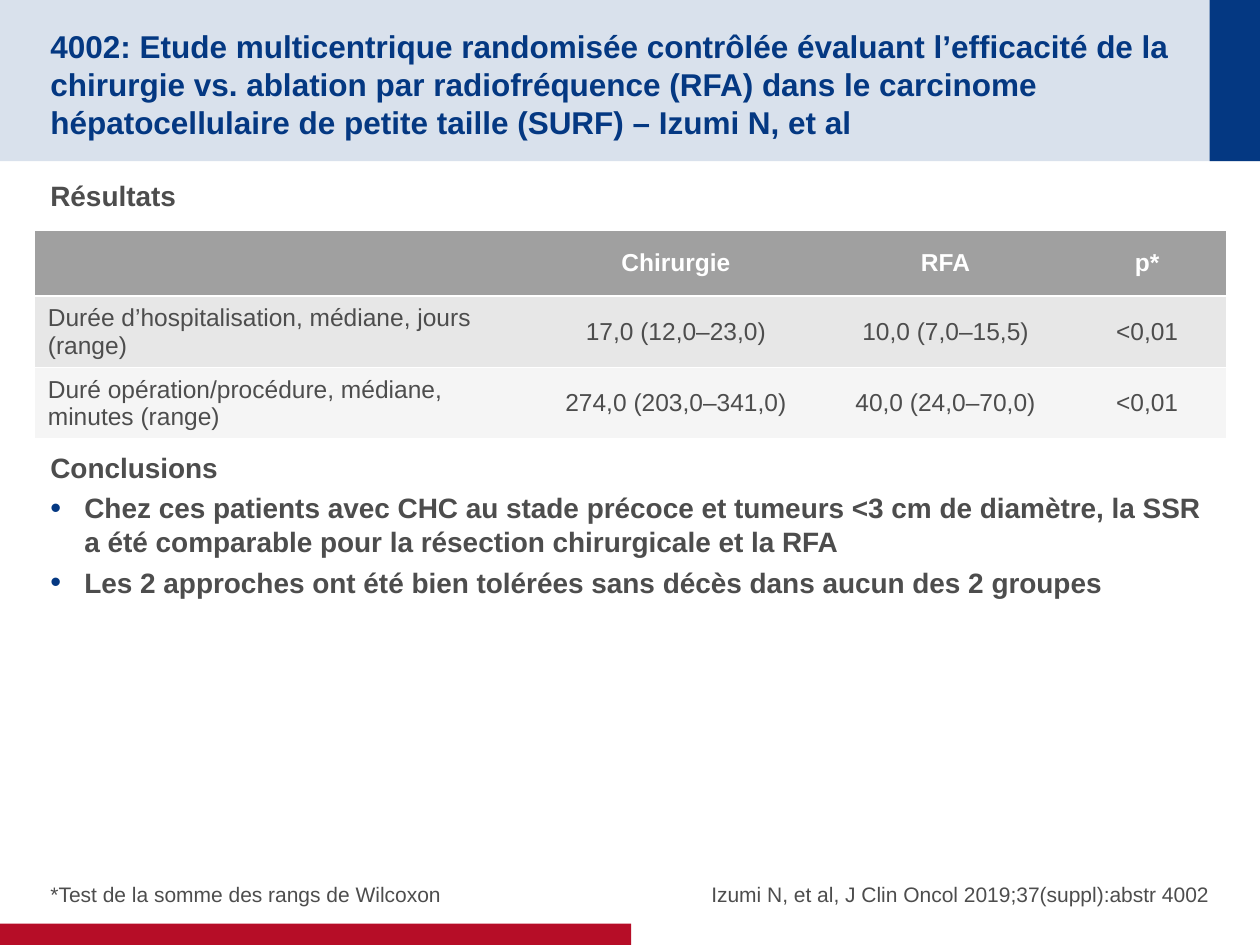
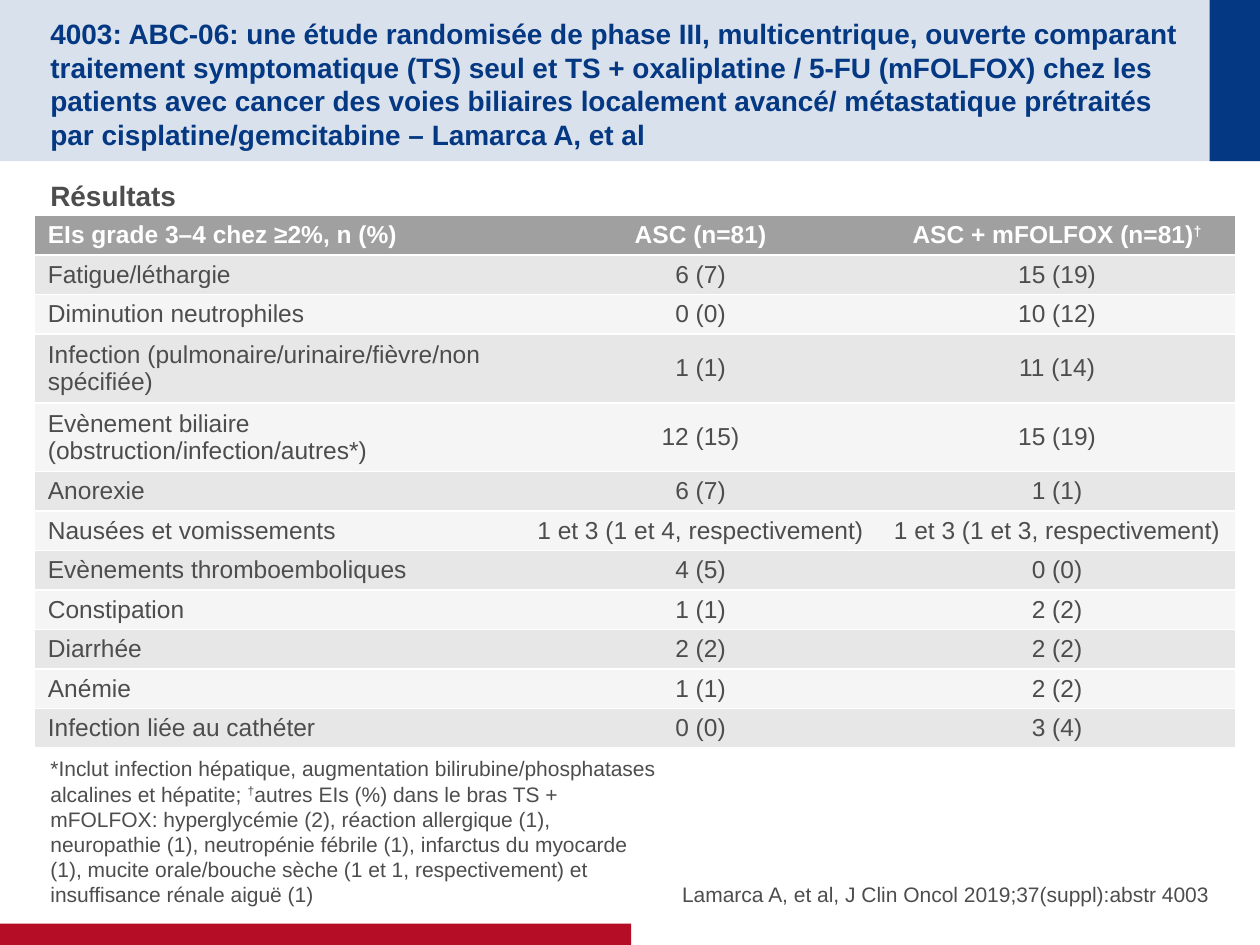
from dataclasses import dataclass

from lxml.etree import SubElement
from pptx import Presentation
from pptx.dml.color import RGBColor
from pptx.enum.shapes import MSO_SHAPE as Shape
from pptx.enum.text import MSO_ANCHOR as Anchor, PP_ALIGN as Align
from pptx.oxml import parse_xml
from pptx.oxml.ns import nsdecls, qn
from pptx.util import Inches, Pt

FONT = "Arial"
NAVY, PALE_NAVY, RED = "043882", "D9E1EC", "B60D27"
INK, WHITE = "4D4D4D", "FFFFFF"
HEADER_GREY, ROW_GREYS = "A0A0A0", ("E7E7E7", "F5F5F5")
DAGGER = "†"


@dataclass(frozen=True)
class Band:
    """A coloured rectangle found on every slide."""
    left: float
    top: float
    width: float
    height: float
    color: str


@dataclass(frozen=True)
class Item:
    """One paragraph of the body text."""
    text: str
    before: float = 0
    bullet: bool = False


@dataclass(frozen=True)
class Grid:
    """A data table with its header row first."""
    top: float
    columns: tuple[float, ...]
    heights: tuple[float, ...]
    margin: float
    rows: tuple[tuple[str, ...], ...]


@dataclass(frozen=True)
class Study:
    """Everything that differs from one slide to the next."""
    title: str
    title_size: float
    body: tuple[Item, ...]
    grid: Grid
    footnote: str
    footnote_width: float
    source: str


BANDS = (
    Band(0, 0, 10, 1.28, PALE_NAVY),
    Band(9.6, 0, 0.4, 1.28, NAVY),
    Band(0, 7.33, 5.01, 0.17, RED),
)

SINGLE, DOUBLE = 0.31, 0.52

SURF = Study(
    title="4002: Etude multicentrique randomisée contrôlée évaluant l’efficacité de la "
          "chirurgie vs. ablation par radiofréquence (RFA) dans le carcinome "
          "hépatocellulaire de petite taille (SURF) – Izumi N, et al",
    title_size=18,
    body=(
        Item("Résultats"),
        Item("Conclusions", before=132),
        Item("Chez ces patients avec CHC au stade précoce et tumeurs <3 cm de diamètre, "
             "la SSR a été comparable pour la résection chirurgicale et la RFA", bullet=True),
        Item("Les 2 approches ont été bien tolérées sans décès dans aucun des 2 groupes",
             bullet=True),
    ),
    grid=Grid(1.83, (3.92, 2.33, 1.95, 1.25), (0.52, 0.54, 0.54), 0.05, (
        ("", "Chirurgie", "RFA", "p*"),
        ("Durée d’hospitalisation, médiane, jours (range)",
         "17,0 (12,0–23,0)", "10,0 (7,0–15,5)", "<0,01"),
        ("Duré opération/procédure, médiane, minutes (range)",
         "274,0 (203,0–341,0)", "40,0 (24,0–70,0)", "<0,01"),
    )),
    footnote="*Test de la somme des rangs de Wilcoxon",
    footnote_width=4.52,
    source="Izumi N, et al, J Clin Oncol 2019;37(suppl):abstr 4002",
)

ABC_06 = Study(
    title="4003: ABC-06: une étude randomisée de phase III, multicentrique, ouverte comparant "
          "traitement symptomatique (TS) seul et TS + oxaliplatine / 5-FU (mFOLFOX) chez les "
          "patients avec cancer des voies biliaires localement avancé/ métastatique prétraités "
          "par cisplatine/gemcitabine – Lamarca A, et al",
    title_size=16,
    body=(Item("Résultats"),),
    grid=Grid(1.71, (3.86, 2.84, 2.82),
              (SINGLE,) * 3 + (DOUBLE,) * 2 + (SINGLE,) * 7, 0.04, (
        ("EIs grade 3–4 chez ≥2%, n (%)", "ASC (n=81)", "ASC + mFOLFOX (n=81)†"),
        ("Fatigue/léthargie", "6 (7)", "15 (19)"),
        ("Diminution neutrophiles", "0 (0)", "10 (12)"),
        ("Infection (pulmonaire/urinaire/fièvre/non spécifiée)", "1 (1)", "11 (14)"),
        ("Evènement biliaire (obstruction/infection/autres*)", "12 (15)", "15 (19)"),
        ("Anorexie", "6 (7)", "1 (1)"),
        ("Nausées et vomissements",
         "1 et 3 (1 et 4, respectivement)", "1 et 3 (1 et 3, respectivement)"),
        ("Evènements thromboemboliques", "4 (5)", "0 (0)"),
        ("Constipation", "1 (1)", "2 (2)"),
        ("Diarrhée", "2 (2)", "2 (2)"),
        ("Anémie", "1 (1)", "2 (2)"),
        ("Infection liée au cathéter", "0 (0)", "3 (4)"),
    )),
    footnote="*Inclut infection hépatique, augmentation bilirubine/phosphatases alcalines et "
             "hépatite; †autres EIs (%) dans le bras TS + mFOLFOX: hyperglycémie (2), réaction "
             "allergique (1), neuropathie (1), neutropénie fébrile (1), infarctus du myocarde "
             "(1), mucite orale/bouche sèche (1 et 1, respectivement) et insuffisance rénale "
             "aiguë (1)",
    footnote_width=4.88,
    source="Lamarca A, et al, J Clin Oncol 2019;37(suppl):abstr 4003",
)


def rgb(color: str) -> RGBColor:
    """Turn a hex string into a colour."""
    return RGBColor.from_string(color)


def write(para, text: str, *, size: float, color: str = INK, bold: bool = False,
          align=Align.LEFT, before: float = 0, after: float = 0, bullet: bool = False) -> None:
    """Fill a paragraph with formatted text, raising any dagger."""
    para.alignment = align
    para.space_before, para.space_after = Pt(before), Pt(after)
    for part in text.partition(DAGGER):
        if not part:
            continue
        span = para.add_run()
        span.text = part
        span.font.name, span.font.size, span.font.bold = FONT, Pt(size), bold
        span.font.color.rgb = rgb(color)
        if part == DAGGER:
            span.font._element.set("baseline", "30000")
    if bullet:
        add_bullet(para)


def add_bullet(para) -> None:
    """Give a paragraph a navy bullet and a hanging indent."""
    properties = para._p.get_or_add_pPr()
    indent = Inches(0.27)
    properties.set("marL", str(indent))
    properties.set("indent", str(-indent))
    bullet_color = SubElement(properties, qn("a:buClr"))
    SubElement(bullet_color, qn("a:srgbClr"), val=NAVY)
    SubElement(properties, qn("a:buSzPct"), val="110000")
    SubElement(properties, qn("a:buFont"), typeface=FONT)
    SubElement(properties, qn("a:buChar"), char="•")


def add_box(page, left: float, top: float, width: float, height: float, *,
            anchor=Anchor.TOP, inset_top: float = 0, inset_bottom: float = 0):
    """Add a wrapping text box and return its text frame."""
    box = page.shapes.add_textbox(Inches(left), Inches(top), Inches(width), Inches(height))
    frame = box.text_frame
    frame.word_wrap = True
    frame.vertical_anchor = anchor
    frame.margin_left = frame.margin_right = 0
    frame.margin_top, frame.margin_bottom = Inches(inset_top), Inches(inset_bottom)
    return frame


def add_band(page, band: Band) -> None:
    """Draw one coloured band."""
    box = page.shapes.add_shape(Shape.RECTANGLE, Inches(band.left), Inches(band.top),
                                Inches(band.width), Inches(band.height))
    box.shadow.inherit = False
    box.fill.solid()
    box.fill.fore_color.rgb = rgb(band.color)
    box.line.fill.background()


def add_body(page, items: tuple[Item, ...]) -> None:
    """Write the headings and bullets of the body."""
    frame = add_box(page, 0.4, 1.37, 9.2, 5.19, inset_top=0.05, inset_bottom=0.05)
    for index, item in enumerate(items):
        para = frame.add_paragraph() if index else frame.paragraphs[0]
        write(para, item.text, size=16, bold=True, before=item.before, after=4,
              bullet=item.bullet)


def rule_cell(cell) -> None:
    """Set white rules above and below a cell and none at its sides."""
    properties = cell._tc.get_or_add_tcPr()
    white = f'<a:solidFill><a:srgbClr val="{WHITE}"/></a:solidFill>'
    sides = (("lnL", "<a:noFill/>"), ("lnR", "<a:noFill/>"), ("lnT", white), ("lnB", white))
    for index, (side, fill) in enumerate(sides):
        line = parse_xml(f'<a:{side} {nsdecls("a")} w="{Pt(1)}">{fill}</a:{side}>')
        properties.insert(index, line)


def add_grid(page, grid: Grid) -> None:
    """Draw a table with a grey header and alternating rows."""
    table = page.shapes.add_table(
        len(grid.rows), len(grid.columns), Inches(0.28), Inches(grid.top),
        Inches(sum(grid.columns)), Inches(sum(grid.heights))).table
    for column, width in zip(table.columns, grid.columns):
        column.width = Inches(width)
    for row_index, (row, texts) in enumerate(zip(table.rows, grid.rows)):
        row.height = Inches(grid.heights[row_index])
        header = row_index == 0
        for column_index, (cell, text) in enumerate(zip(row.cells, texts)):
            cell.vertical_anchor = Anchor.MIDDLE
            cell.margin_top = cell.margin_bottom = Inches(grid.margin)
            cell.fill.solid()
            cell.fill.fore_color.rgb = rgb(HEADER_GREY if header else ROW_GREYS[1 - row_index % 2])
            rule_cell(cell)
            write(cell.text_frame.paragraphs[0], text, size=14, bold=header,
                  color=WHITE if header else INK,
                  align=Align.CENTER if column_index else Align.LEFT)


def add_study(deck, study: Study) -> None:
    """Build one slide."""
    page = deck.slides.add_slide(deck.slide_layouts[6])
    for band in BANDS:
        add_band(page, band)
    title = add_box(page, 0.4, 0.2, 9.01, 0.88, anchor=Anchor.MIDDLE, inset_top=0.05)
    write(title.paragraphs[0], study.title, size=study.title_size, color=NAVY, bold=True)
    add_body(page, study.body)
    footnote = add_box(page, 0.4, 6.4, study.footnote_width, 0.8, anchor=Anchor.BOTTOM)
    write(footnote.paragraphs[0], study.footnote, size=12, after=4)
    source = add_box(page, 4.92, 6.67, 4.68, 0.53, anchor=Anchor.BOTTOM)
    write(source.paragraphs[0], study.source, size=12, align=Align.RIGHT, after=4)
    add_grid(page, study.grid)


def main() -> None:
    """Build and save the deck."""
    deck = Presentation()
    deck.slide_width, deck.slide_height = Inches(10), Inches(7.5)
    for study in (SURF, ABC_06):
        add_study(deck, study)
    deck.save("out.pptx")


if __name__ == "__main__":
    main()
